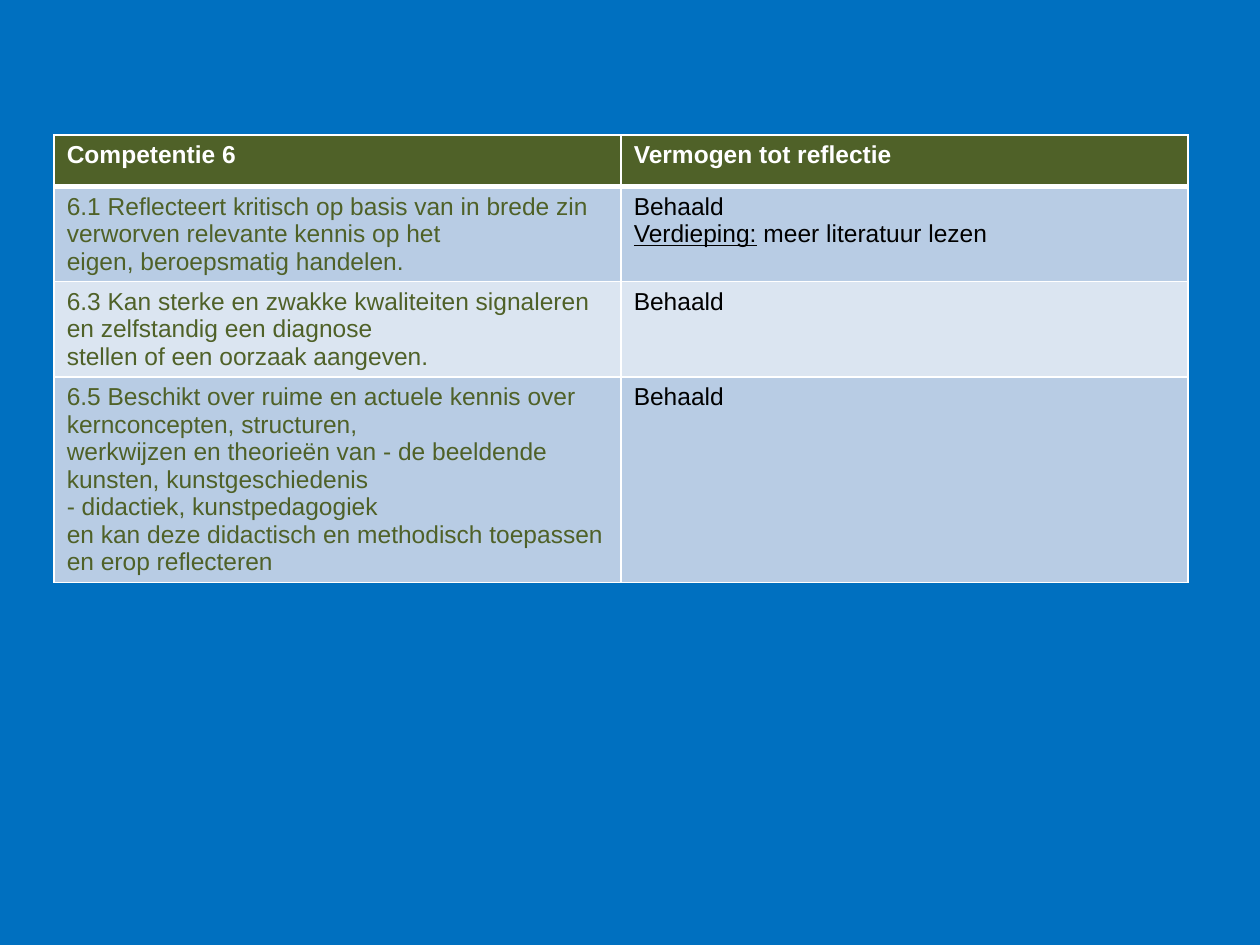
"""Builds the slide with the assessment table for competence 6."""
from lxml import etree
from pptx import Presentation
from pptx.dml.color import RGBColor
from pptx.oxml.ns import qn
from pptx.util import Inches, Pt

BLANK_LAYOUT = 6
BLUE, WHITE, BLACK, GREEN = "0070C0", "FFFFFF", "000000", "4F6128"
BANDS = ("B8CCE4", "DBE5F1")
HEADINGS = ("Competentie 6", "Vermogen tot reflectie")
ACHIEVED = [["Behaald"]]
UNDERLINED = "Verdieping:"
ASSESSMENTS = [
    ([["6.1 Reflecteert kritisch op basis van in brede zin verworven relevante kennis op het"],
      ["eigen, beroepsmatig handelen."]],
     ACHIEVED + [[UNDERLINED, " meer literatuur lezen"]]),
    ([["6.3 Kan sterke en zwakke kwaliteiten signaleren en zelfstandig een diagnose"],
      ["stellen of een oorzaak aangeven."]],
     ACHIEVED),
    ([["6.5 Beschikt over ruime en actuele kennis over kernconcepten, structuren,"],
      ["werkwijzen en theorieën van - de beeldende kunsten, kunstgeschiedenis"],
      ["- didactiek, kunstpedagogiek"],
      ["en kan deze didactisch en methodisch toepassen en erop reflecteren"]],
     ACHIEVED),
]
ROW_HEIGHTS = (0.41, 0.75, 0.75, 1.63)


def color(hex_string):
    return RGBColor.from_string(hex_string)


class SlideBuilder:
    def __init__(self, slide, font="Arial", size=14):
        self.slide, self.font, self.size = slide, font, size

    def background(self, fill):
        self.slide.background.fill.solid()
        self.slide.background.fill.fore_color.rgb = color(fill)

    def table(self, left, top, width, heights, columns):
        frame = self.slide.shapes.add_table(
            len(heights), columns, Inches(left), Inches(top), Inches(width), Inches(sum(heights)))
        for row, height in zip(frame.table.rows, heights):
            row.height = Inches(height)
        return frame.table

    def borders(self, cell, top=1, bottom=1):
        properties = cell._tc.get_or_add_tcPr()
        for side, points in (("L", 1), ("R", 1), ("T", top), ("B", bottom)):
            line = etree.SubElement(properties, qn(f"a:ln{side}"), w=str(Pt(points)))
            fill = etree.SubElement(line, qn("a:solidFill"))
            etree.SubElement(fill, qn("a:srgbClr"), val=WHITE)

    def cell(self, cell, paragraphs, fill, text_color, bold=False, top=1, bottom=1):
        self.borders(cell, top, bottom)
        cell.fill.solid()
        cell.fill.fore_color.rgb = color(fill)
        for index, parts in enumerate(paragraphs):
            frame = cell.text_frame
            paragraph = frame.add_paragraph() if index else frame.paragraphs[0]
            font = paragraph.font
            font.name, font.size, font.bold = self.font, Pt(self.size), bold
            font.color.rgb = color(text_color)
            for part in parts:
                run = paragraph.add_run()
                run.text = part
                if part == UNDERLINED:
                    run.font.underline = True


def main():
    presentation = Presentation()
    presentation.slide_width, presentation.slide_height = Inches(10), Inches(7.5)
    slide = presentation.slides.add_slide(presentation.slide_layouts[BLANK_LAYOUT])
    builder = SlideBuilder(slide)
    builder.background(BLUE)
    assessment = builder.table(0.43, 1.07, 9, ROW_HEIGHTS, len(HEADINGS))
    for column, heading in enumerate(HEADINGS):
        builder.cell(assessment.cell(0, column), [[heading]], GREEN, WHITE, bold=True, bottom=3)
    for row, contents in enumerate(ASSESSMENTS, start=1):
        band = BANDS[(row - 1) % len(BANDS)]
        for column, (paragraphs, text_color) in enumerate(zip(contents, (GREEN, BLACK))):
            builder.cell(assessment.cell(row, column), paragraphs, band, text_color,
                         top=3 if row == 1 else 1)
    presentation.save("out.pptx")


if __name__ == "__main__":
    main()
